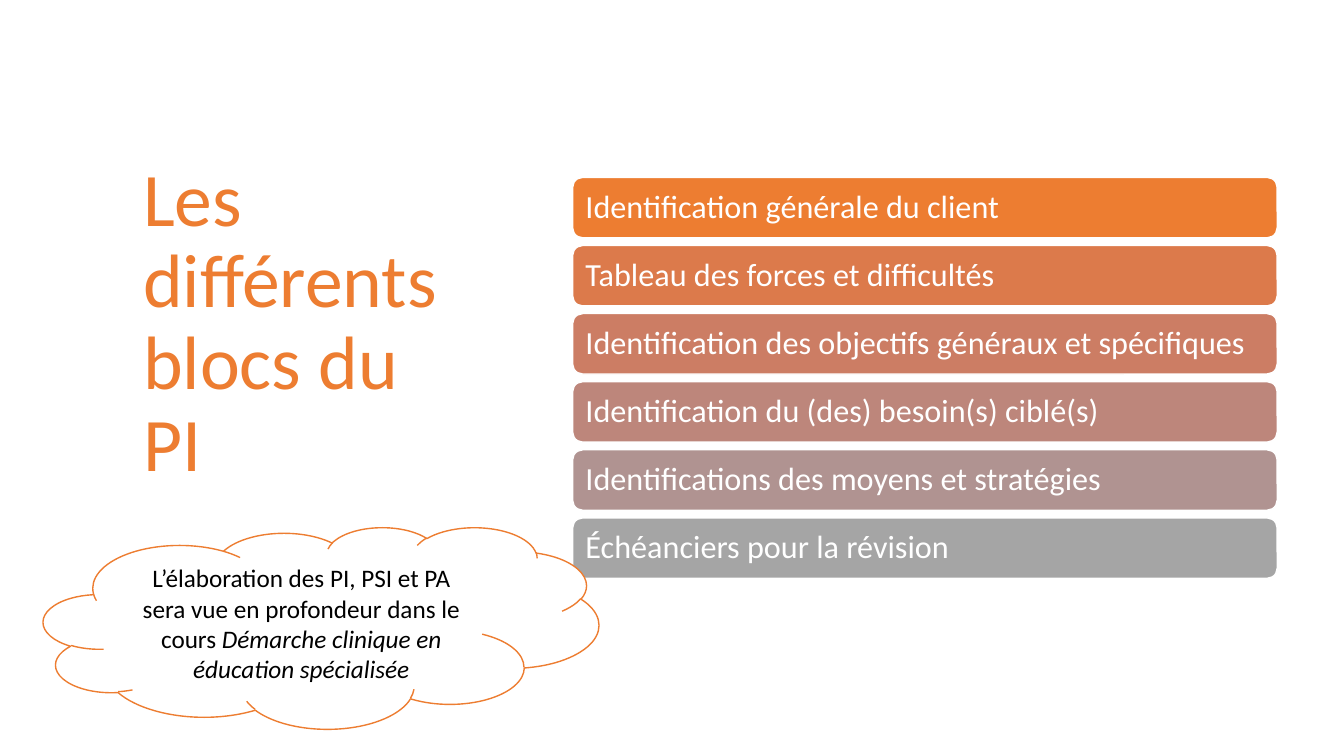
import pptx
import pptx.dml.color
import pptx.enum.shapes
import pptx.enum.text
import pptx.util

Pt = pptx.util.Pt
RGBColor = pptx.dml.color.RGBColor
Shape = pptx.enum.shapes.MSO_SHAPE
Anchor = pptx.enum.text.MSO_ANCHOR
Align = pptx.enum.text.PP_ALIGN

ORANGE = RGBColor(0xED, 0x7D, 0x31)
WHITE = RGBColor(0xFF, 0xFF, 0xFF)
BLACK = RGBColor(0x00, 0x00, 0x00)

BLOCKS = [
    ("Identification générale du client", ORANGE),
    ("Tableau des forces et difficultés", RGBColor(0xDC, 0x7A, 0x4B)),
    ("Identification des objectifs généraux et spécifiques", RGBColor(0xCC, 0x7D, 0x64)),
    ("Identification du (des) besoin(s) ciblé(s)", RGBColor(0xBD, 0x86, 0x7B)),
    ("Identifications des moyens et stratégies", RGBColor(0xB0, 0x93, 0x91)),
    ("Échéanciers pour la révision", RGBColor(0xA5, 0xA5, 0xA5)),
]
BLOCK_LEFT, BLOCK_TOP, BLOCK_WIDTH, BLOCK_HEIGHT = 409, 126.7, 503.3, 43.2
BLOCK_STEP = 48.65


class SlideBuilder:
    """Draws styled titles and shapes on the current slide, in points."""

    font_name = "Calibri"

    def __init__(self, page):
        self.page = page

    def fill_text(self, box, spans, size, color, align=Align.LEFT, spacing=1.0):
        frame = box.text_frame
        frame.word_wrap = True
        frame.auto_size = pptx.enum.text.MSO_AUTO_SIZE.NONE
        frame.vertical_anchor = Anchor.MIDDLE
        para = frame.paragraphs[0]
        para.alignment = align
        para.line_spacing = spacing
        for text, italic in spans:
            span = para.add_run()
            span.text = text
            span.font.name = self.font_name
            span.font.size = Pt(size)
            span.font.italic = italic
            span.font.color.rgb = color

    def title(self, text, left, top, width, height):
        box = self.page.shapes.title
        box.left, box.top = Pt(left), Pt(top)
        box.width, box.height = Pt(width), Pt(height)
        self.fill_text(box, [(text, False)], 54, ORANGE, spacing=0.9)

    def shape(self, kind, left, top, width, height, fill, line):
        box = self.page.shapes.add_shape(kind, Pt(left), Pt(top), Pt(width), Pt(height))
        box.shadow.inherit = False
        box.fill.solid()
        box.fill.fore_color.rgb = fill
        box.line.color.rgb = line
        box.line.width = Pt(1)
        return box

    def block(self, text, left, top, width, height, fill):
        box = self.shape(Shape.ROUNDED_RECTANGLE, left, top, width, height, fill, WHITE)
        self.fill_text(box, [(text, False)], 23, WHITE, spacing=0.9)

    def cloud(self, spans, left, top, width, height):
        box = self.shape(Shape.CLOUD, left, top, width, height, WHITE, ORANGE)
        self.fill_text(box, spans, 18, BLACK, Align.CENTER)


def main():
    deck = pptx.Presentation()
    deck.slide_width, deck.slide_height = Pt(960), Pt(540)
    builder = SlideBuilder(deck.slides.add_slide(deck.slide_layouts[5]))

    builder.title("Les différents blocs du PI", 95, 41, 232, 381)
    for index, (text, fill) in enumerate(BLOCKS):
        top = BLOCK_TOP + index * BLOCK_STEP
        builder.block(text, BLOCK_LEFT, top, BLOCK_WIDTH, BLOCK_HEIGHT, fill)
    builder.cloud(
        [
            ("L’élaboration des PI, PSI et PA sera vue en profondeur dans le cours ", False),
            ("Démarche clinique en éducation spécialisée", True),
        ],
        31, 376.5, 396.7, 144,
    )
    deck.save("out.pptx")


if __name__ == "__main__":
    main()
